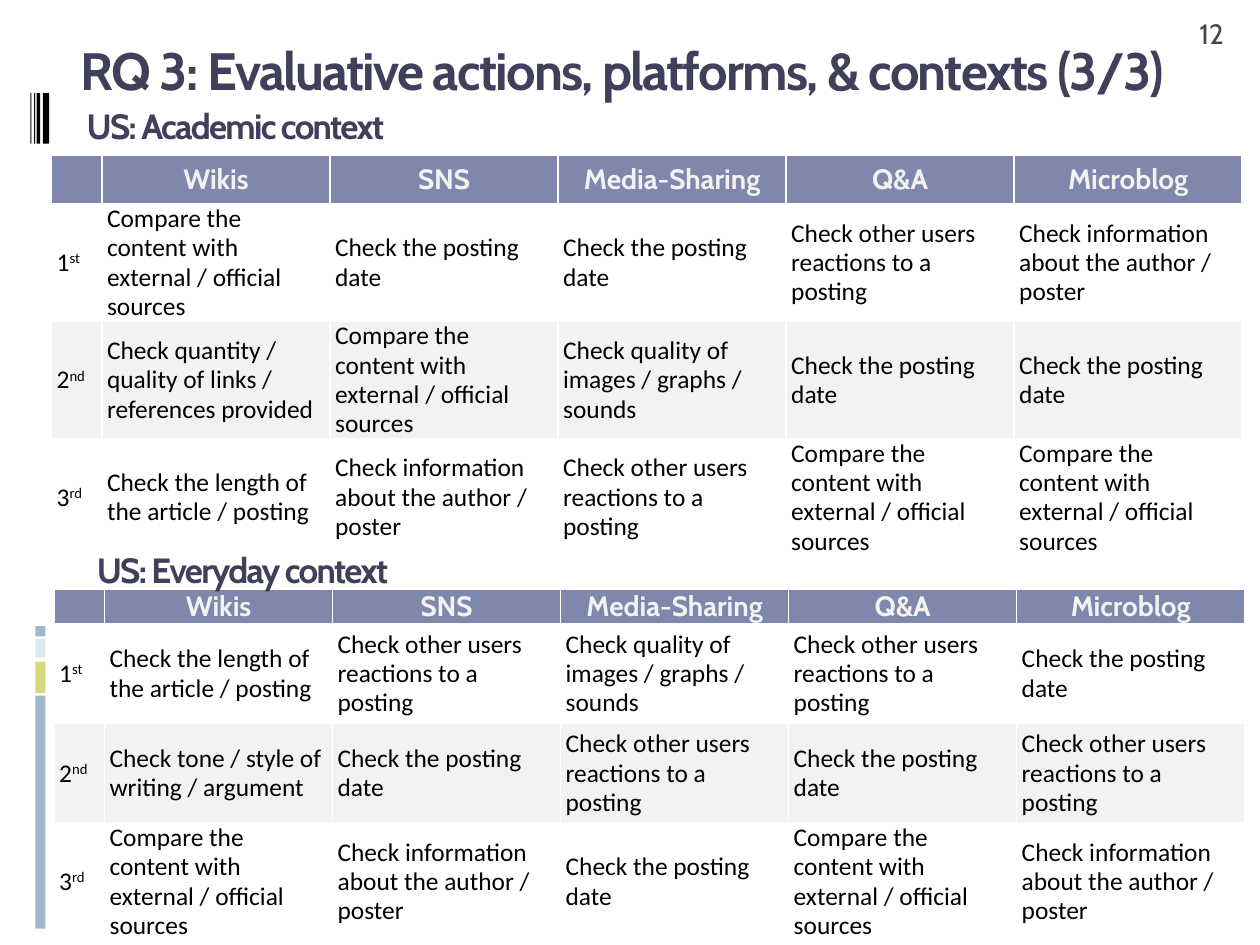
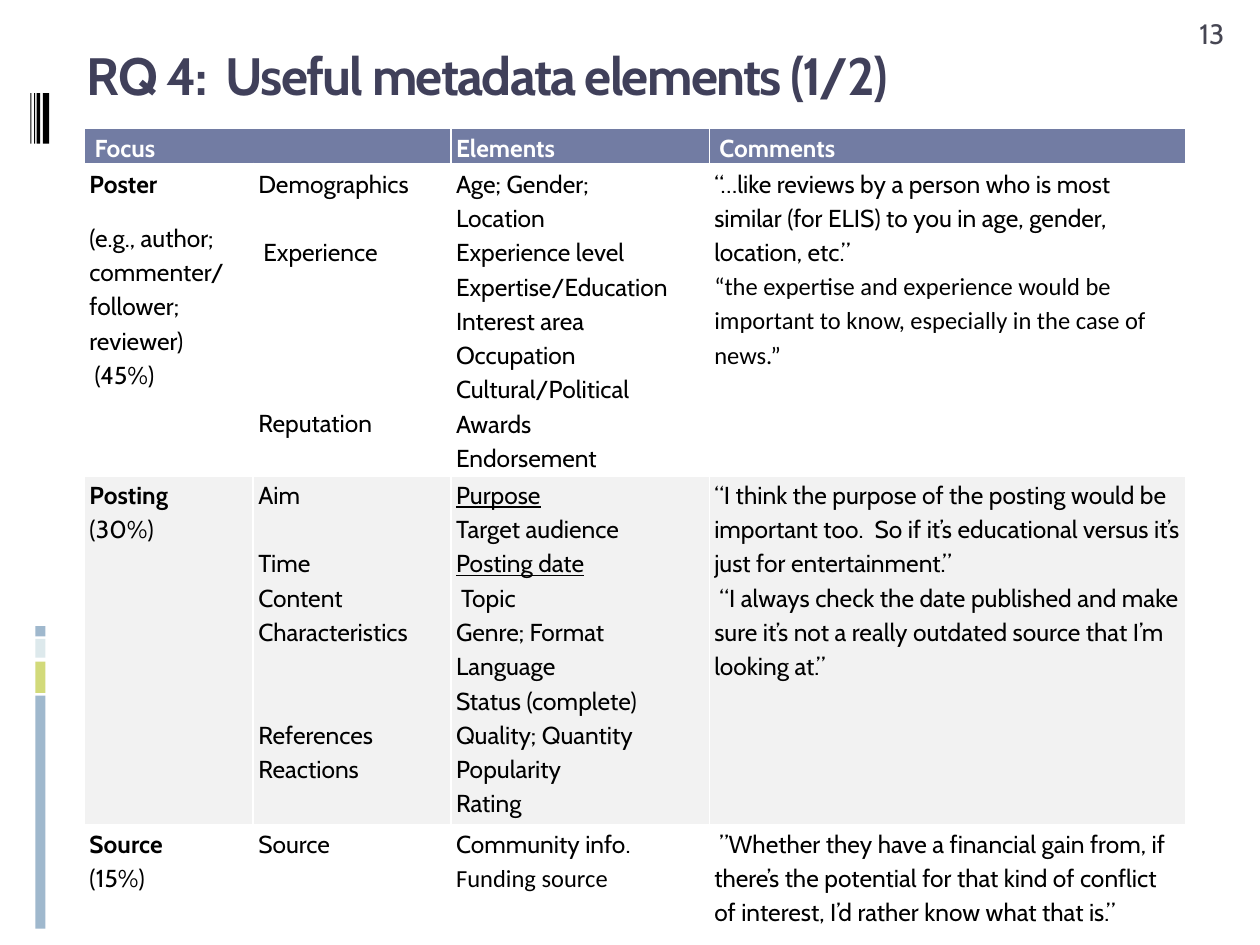
from dataclasses import dataclass

from lxml import etree
from pptx import Presentation
from pptx.dml.color import RGBColor
from pptx.enum.shapes import MSO_SHAPE
from pptx.enum.text import MSO_ANCHOR, MSO_AUTO_SIZE, PP_ALIGN
from pptx.oxml.ns import qn
from pptx.util import Inches, Pt

RECT = MSO_SHAPE.RECTANGLE
TOP, MIDDLE, BOTTOM = MSO_ANCHOR.TOP, MSO_ANCHOR.MIDDLE, MSO_ANCHOR.BOTTOM
LEFT, CENTER = PP_ALIGN.LEFT, PP_ALIGN.CENTER
NO_FIT = MSO_AUTO_SIZE.NONE

CABIN, CALIBRI = "Cabin", "Calibri"
INK, NAVY, GRAY = "000000", "40405A", "464653"
WHITE, PALE, SLATE = "FFFFFF", "F2F2F2", "727CA3"
BLUE, LIME, ICE = "9FB8CD", "D2DA7A", "DDE9EC"
LINE_PT = 19.55


@dataclass
class Bar:
    """A plain strip at the left edge."""
    left: float
    top: float
    width: float
    height: float
    color: str


@dataclass
class Line:
    """One paragraph of a cell; gap counts the empty lines above it."""
    text: str
    sup: str = ""
    gap: float = 0
    bold: bool = False
    under: bool = False
    font: str = CABIN
    indent: bool = False


@dataclass
class Look:
    """The text format of a table."""
    head_size: float
    head_color: str
    head_align: PP_ALIGN
    head_space: float
    head_alpha: int
    head_rule: float
    size: float
    space: float
    anchor: MSO_ANCHOR


@dataclass
class Grid:
    """A table with its place, sizes and cells."""
    left: float
    top: float
    cols: list[float]
    rows: list[float]
    cells: list[list[list[Line]]]
    look: Look
    merge: bool = False


BARS = [
    Bar(0.28, 5.52, 0.08, 1.85, BLUE),
    Bar(0.28, 5.25, 0.08, 0.25, LIME),
    Bar(0.28, 5.07, 0.08, 0.15, ICE),
    Bar(0.28, 4.97, 0.08, 0.08, BLUE),
] + [Bar(left, 0.74, width, 0.4, INK) for left, width in
     [(0.34, 0.05), (0.29, 0.03), (0.27, 0.01), (0.24, 0.01)]]

RANKED = Look(16, PALE, CENTER, 1, 90, 1, 14.5, 0.95, MIDDLE)
LISTED = Look(14, WHITE, LEFT, 1.15, 100, 3, 14, 1.15, TOP)

COMPARE = "Compare the content with external / official sources"
DATE = "Check the posting date"
USERS = "Check other users reactions to a posting"
AUTHOR = "Check information about the author / poster"
LENGTH = "Check the length of the article / posting"
IMAGES = "Check quality of images / graphs / sounds"
LINKS = "Check quantity / quality of links / references provided"
TONE = "Check tone / style of writing / argument"

SITES = ["Wikis", "SNS", "Media-Sharing", "Q&A", "Microblog"]
RANKS = [("1", "st"), ("2", "nd"), ("3", "rd")]
ACADEMIC = [
    [COMPARE, DATE, DATE, USERS, AUTHOR],
    [LINKS, COMPARE, IMAGES, DATE, DATE],
    [LENGTH, AUTHOR, USERS, COMPARE, COMPARE],
]
EVERYDAY = [
    [LENGTH, USERS, IMAGES, USERS, DATE],
    [TONE, DATE, USERS, DATE, USERS],
    [COMPARE, AUTHOR, DATE, COMPARE, AUTHOR],
]


def lines(*texts: str) -> list[Line]:
    """Turn plain texts into lines."""
    return [Line(text) for text in texts]


METADATA = [
    [[Line("Focus", bold=True, indent=True)], [],
     [Line("Elements", bold=True)],
     [Line("Comments", bold=True, indent=True)]],
    [[Line("Poster", bold=True), Line("(e.g., author;", gap=0.58),
      *lines("commenter/ follower;", "reviewer)"),
      Line("(45%)", indent=True)],
     [Line("Demographics"), Line("Experience", gap=1, indent=True),
      Line("Reputation", gap=4)],
     lines("Age; Gender;", "Location", "Experience level",
           "Expertise/Education", "Interest area", "Occupation",
           "Cultural/Political", "Awards", "Endorsement"),
     [Line("“…like reviews by a person who is most similar (for ELIS) "
           "to you in age, gender, location, etc.”"),
      Line("“the expertise and experience would be important to know, "
           "especially in the case of news.”", font=CALIBRI)]],
    [[Line("Posting", bold=True), Line("(30%)")],
     [Line("Aim"), Line("Time", gap=1), *lines("Content", "Characteristics"),
      Line("References", gap=2), Line("Reactions")],
     [Line("Purpose", under=True), Line("Target audience"),
      Line("Posting date", under=True), Line("Topic", indent=True),
      *lines("Genre; Format", "Language", "Status (complete)",
             "Quality; Quantity", "Popularity", "Rating")],
     [Line("“I think the purpose of the posting would be important too.  "
           "So if it’s educational versus it’s just for entertainment.”"),
      Line("“I always check the date published and make sure it’s not a "
           "really outdated source that I’m looking at.”", indent=True)]],
    [[Line("Source", bold=True), Line("(15%)")],
     lines("Source"),
     [Line("Community info."), Line("Funding source", font=CALIBRI)],
     [Line("”Whether they have a financial gain from, if there’s the "
           "potential for that kind of conflict of interest, I’d rather "
           "know what that is.”", indent=True)]],
]


def paint(target, color: str) -> None:
    """Give a fill or font a solid colour."""
    if hasattr(target, "solid"):
        target.solid()
        target.fore_color.rgb = RGBColor.from_string(color)
    else:
        target.color.rgb = RGBColor.from_string(color)


def write(para, text: str, *, size: float, color: str = INK,
          font: str = CABIN, bold: bool = False, under: bool = False,
          base: int = 0, track: int = 0) -> None:
    """Add a run of text in the given format."""
    run = para.add_run()
    run.text = text
    run.font.size, run.font.name = Pt(size), font
    run.font.bold, run.font.underline = bold, under
    paint(run.font, color)
    props = run.font._element
    for key, value in (("baseline", base), ("spc", track)):
        if value:
            props.set(key, str(value))


def place(shape, left: float, top: float, width: float, height: float,
          anchor: MSO_ANCHOR = TOP):
    """Set a text shape's box and return its first paragraph."""
    shape.left, shape.top = Inches(left), Inches(top)
    shape.width, shape.height = Inches(width), Inches(height)
    frame = shape.text_frame
    frame.word_wrap, frame.auto_size = True, NO_FIT
    frame.vertical_anchor = anchor
    para = frame.paragraphs[0]
    para.alignment = LEFT
    return para


def label(slide, box: tuple, text: str, anchor: MSO_ANCHOR = TOP,
          **form) -> None:
    """Add a text box with one line."""
    shape = slide.shapes.add_textbox(*map(Inches, box))
    write(place(shape, *box, anchor), text, **form)


def edge(cell, rule: float) -> None:
    """Draw white borders, with the bottom one as thick as rule."""
    props = cell._tc.get_or_add_tcPr()
    for side, width in (("L", 1), ("R", 1), ("T", 1), ("B", rule)):
        ln = etree.SubElement(props, qn(f"a:ln{side}"), w=str(Pt(width)))
        fill = etree.SubElement(ln, qn("a:solidFill"))
        etree.SubElement(fill, qn("a:srgbClr"), val=WHITE)


def fill_cell(cell, items: list[Line], look: Look, row: int) -> None:
    """Format one cell and write its lines."""
    head = row == 0
    cell.margin_left = cell.margin_right = Inches(0.04)
    cell.margin_top = cell.margin_bottom = 0
    cell.vertical_anchor = MIDDLE if head else look.anchor
    edge(cell, look.head_rule if head else 1)
    paint(cell.fill, SLATE if head else (PALE if row == 2 else WHITE))
    if head and look.head_alpha < 100:
        tint = cell._tc.tcPr.find(f"{qn('a:solidFill')}/{qn('a:srgbClr')}")
        etree.SubElement(tint, qn("a:alpha"), val=str(look.head_alpha * 1000))
    size = look.head_size if head else look.size
    color = look.head_color if head else INK
    frame = cell.text_frame
    if not items:
        etree.SubElement(frame.paragraphs[0]._p, qn("a:endParaRPr"),
                         sz=str(size * 100))
    for num, item in enumerate(items):
        para = frame.add_paragraph() if num else frame.paragraphs[0]
        para.alignment = look.head_align if head else LEFT
        para.line_spacing = look.head_space if head else look.space
        para.space_before = Pt(item.gap * LINE_PT)
        if item.indent:
            para._p.get_or_add_pPr().set("indent", str(Inches(0.04)))
        form = dict(size=size, color=color, font=item.font,
                    bold=item.bold, under=item.under)
        write(para, item.text, **form)
        if item.sup:
            write(para, item.sup, base=30000, **form)


def draw_grid(slide, grid: Grid) -> None:
    """Add a table."""
    table = slide.shapes.add_table(
        len(grid.rows), len(grid.cols), Inches(grid.left), Inches(grid.top),
        Inches(sum(grid.cols)), Inches(sum(grid.rows))).table
    for col, width in zip(table.columns, grid.cols):
        col.width = Inches(width)
    for row, height in zip(table.rows, grid.rows):
        row.height = Inches(height)
    for r, cells in enumerate(grid.cells):
        for c, items in enumerate(cells):
            fill_cell(table.cell(r, c), items, grid.look, r)
    if grid.merge:
        table.cell(0, 0).merge(table.cell(0, 1))


def ranking(actions: list[list[str]]) -> list[list[list[Line]]]:
    """Build the cells of a table of ranked actions by site."""
    head = [[]] + [[Line(site, bold=True)] for site in SITES]
    body = [[[Line(num, sup=sup, font=CALIBRI)]]
            + [[Line(text, font=CALIBRI)] for text in row]
            for (num, sup), row in zip(RANKS, actions)]
    return [head] + body


def start(deck, title: str, left: float, top: float, page: str):
    """Add a slide with its bars, title and page number."""
    slide = deck.slides.add_slide(deck.slide_layouts[5])
    for bar in BARS:
        shape = slide.shapes.add_shape(
            RECT, Inches(bar.left), Inches(bar.top),
            Inches(bar.width), Inches(bar.height))
        shape.shadow.inherit = False
        shape.line.fill.background()
        paint(shape.fill, bar.color)
    para = place(slide.shapes.title, left, top, 8.98, 0.63)
    write(para, title, size=30, color=NAVY, bold=True, track=-100)
    label(slide, (9.42, 0.05, 0.5, 0.4), page, BOTTOM, size=16, color=GRAY)
    return slide


def main() -> None:
    """Build the deck."""
    deck = Presentation()
    deck.slide_width, deck.slide_height = Inches(10), Inches(7.5)

    slide = start(deck, "RQ 3: Evaluative actions, platforms, & contexts (3/3)",
                  0.54, 0.25, "12")
    cols = [0.4] + [1.81] * 5
    draw_grid(slide, Grid(0.41, 1.23, cols, [0.39, 0.92, 0.92, 0.92],
                          ranking(ACADEMIC), RANKED))
    draw_grid(slide, Grid(0.43, 4.68, cols, [0.27, 0.79, 0.79, 0.91],
                          ranking(EVERYDAY), RANKED))
    for left, top, text in [(0.59, 0.78, "US: Academic context"),
                            (0.67, 4.3, "US: Everyday context")]:
        label(slide, (left, top, 8.74, 0.39), text, size=20, color=NAVY,
              bold=True, track=-100)

    slide = start(deck, "RQ 4:  Useful metadata elements (1/2)",
                  0.59, 0.29, "13")
    draw_grid(slide, Grid(0.67, 1.02, [1.34, 1.57, 2.05, 3.78],
                          [0.29, 2.47, 2.77, 0.79], METADATA, LISTED, True))
    deck.save("out.pptx")


if __name__ == "__main__":
    main()
